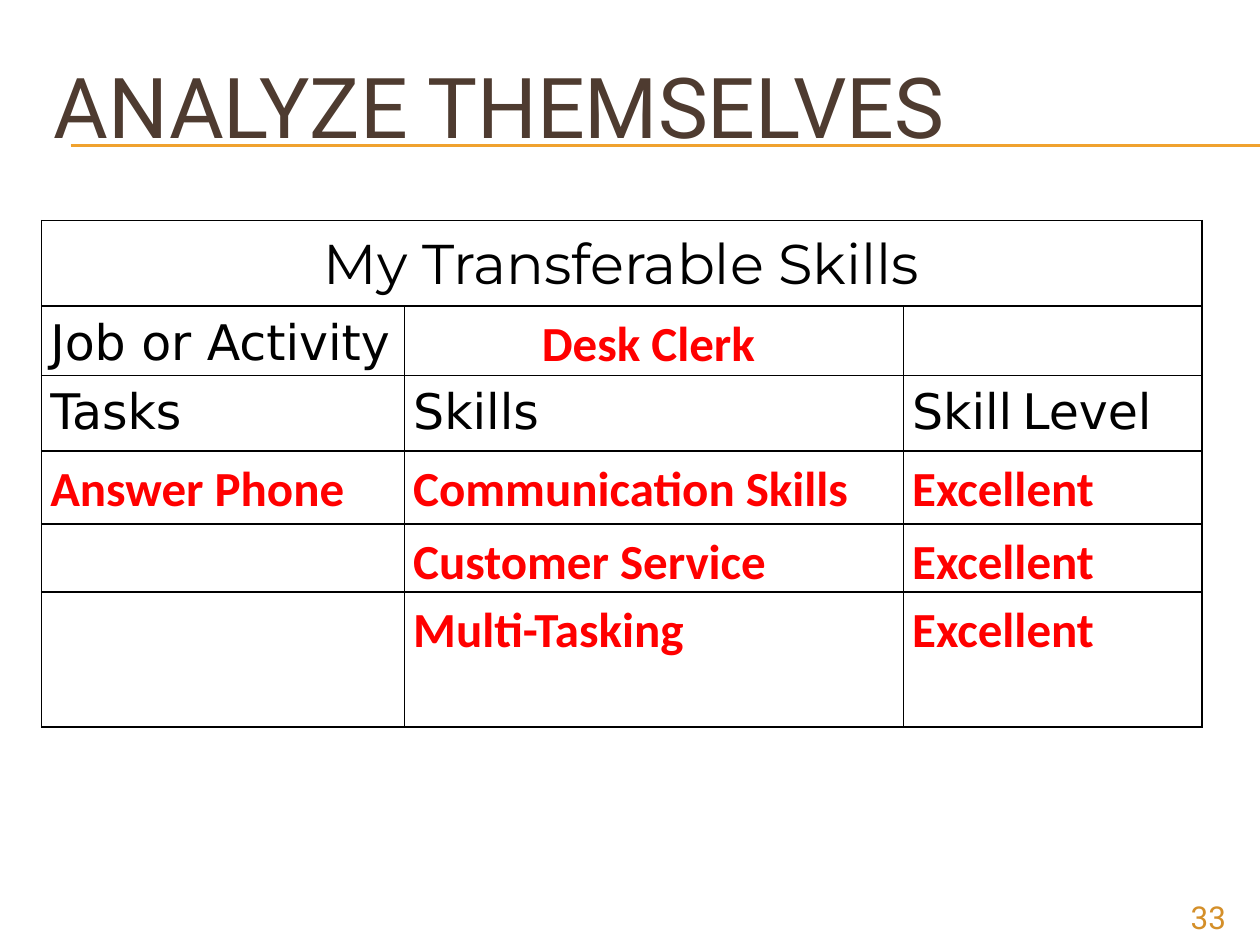
import pptx
import pptx.dml.color
import pptx.enum.shapes
import pptx.enum.text
import pptx.oxml
import pptx.oxml.ns
import pptx.util
import lxml.etree

COLORS = {"title": "4E3B30", "rule": "F0A22E", "number": "D48F29",
          "label": "000000", "answer": "FF0000", "border": "000000"}
COLUMNS, ROWS = 100, 75
ALIGN = pptx.enum.text.PP_ALIGN
ANCHOR = pptx.enum.text.MSO_ANCHOR


def color(name):
    return pptx.dml.color.RGBColor.from_string(COLORS[name])


class SkillsSlide:
    """Draws on one slide; lengths are in columns and rows of the grid."""

    def __init__(self, presentation):
        self.slide = presentation.slides.add_slide(presentation.slide_layouts[6])
        self.column = presentation.slide_width / COLUMNS
        self.row = presentation.slide_height / ROWS

    def x(self, columns):
        return round(columns * self.column)

    def y(self, rows):
        return round(rows * self.row)

    def box(self, left, top, width, height):
        return self.x(left), self.y(top), self.x(width), self.y(height)

    def style(self, paragraph, font, size, ink, bold=False, align=ALIGN.LEFT):
        paragraph.alignment = align
        for run in paragraph.runs:
            run.font.name = font
            run.font.size = pptx.util.Pt(size)
            run.font.bold = bold
            run.font.color.rgb = color(ink)

    def rule(self, left, right, top):
        line = self.slide.shapes.add_connector(
            pptx.enum.shapes.MSO_CONNECTOR.STRAIGHT,
            self.x(left), self.y(top), self.x(right), self.y(top))
        line.line.color.rgb = color("rule")
        line.line.width = pptx.util.Pt(0.75)
        lxml.etree.SubElement(line._element.spPr, pptx.oxml.ns.qn("a:effectLst"))

    def text(self, words, area, size, ink, align=ALIGN.LEFT, anchor=ANCHOR.TOP):
        frame = self.slide.shapes.add_textbox(*self.box(*area)).text_frame
        frame.word_wrap = True
        frame.vertical_anchor = anchor
        frame.text = words
        self.style(frame.paragraphs[0], "Roboto", size, ink, align=align)

    def border(self, cell):
        properties = cell._tc.get_or_add_tcPr()
        for side in ("lnL", "lnR", "lnT", "lnB"):
            properties.append(pptx.oxml.parse_xml(
                f'<a:{side} {pptx.oxml.ns.nsdecls("a")} w="{pptx.util.Pt(1)}">'
                f'<a:solidFill><a:srgbClr val="{COLORS["border"]}"/></a:solidFill>'
                f'</a:{side}>'))

    def table(self, left, top, widths, heights):
        area = self.box(left, top, sum(widths), sum(heights))
        table = self.slide.shapes.add_table(len(heights), len(widths), *area).table
        table.first_row = table.horz_banding = False
        for column, width in zip(table.columns, widths):
            column.width = self.x(width)
        for row, height in zip(table.rows, heights):
            row.height = self.y(height)
        for cell in table.iter_cells():
            self.border(cell)
            cell.fill.background()
            cell.margin_left = cell.margin_right = self.x(0.7)
            cell.margin_top = cell.margin_bottom = 0
        return table

    def cell(self, cell, words, font, size, ink, bold=False, align=ALIGN.LEFT):
        cell.text = words
        paragraph = cell.text_frame.paragraphs[0]
        paragraph.line_spacing = 1.15
        self.style(paragraph, font, size, ink, bold, align)

    def label(self, cell, words):
        self.cell(cell, words, "DejaVu Sans", 28, "label")

    def answer(self, cell, words, align=ALIGN.LEFT):
        self.cell(cell, words, "Calibri", 28, "answer", True, align)


def main():
    presentation = pptx.Presentation()
    presentation.slide_width = pptx.util.Inches(10)
    presentation.slide_height = pptx.util.Inches(7.5)
    page = SkillsSlide(presentation)

    for top in (11.5, 11.6):
        page.rule(5.6, COLUMNS, top)
    page.text("ANALYZE THEMSELVES", (3.3, 3.3, 95, 10), 48, "title",
              anchor=ANCHOR.MIDDLE)

    skills = page.table(3.3, 17.5, (28.8, 39.6, 23.7),
                        (6.8, 5.5, 6, 5.8, 5.4, 10.7))
    skills.cell(0, 0).merge(skills.cell(0, 2))
    page.cell(skills.cell(0, 0), "My Transferable Skills", "Montserrat", 32,
              "label", align=ALIGN.CENTER)

    page.label(skills.cell(1, 0), "Job or Activity")
    page.answer(skills.cell(1, 1), "Desk Clerk ", ALIGN.CENTER)
    for column, heading in enumerate(("Tasks", "Skills", "Skill Level")):
        page.label(skills.cell(2, column), heading)
    # The gap inside the last heading is narrower than its words.
    level = skills.cell(2, 2).text_frame.paragraphs[0]
    level.text = ""
    for part, size in (("Skill", 28), (" ", 18), ("Level", 28)):
        run = level.add_run()
        run.text = part
        run.font.name = "DejaVu Sans"
        run.font.size = pptx.util.Pt(size)
        run.font.color.rgb = color("label")

    page.answer(skills.cell(3, 0), "Answer Phone")
    learned = ("Communication Skills", "Customer Service", "Multi-Tasking")
    for row, skill in enumerate(learned, start=3):
        page.answer(skills.cell(row, 1), skill)
        page.answer(skills.cell(row, 2), "Excellent")

    page.text("33", (90, 70.8, 8.3, 2.7), 18, "number", ALIGN.RIGHT)
    presentation.save("out.pptx")


if __name__ == "__main__":
    main()
